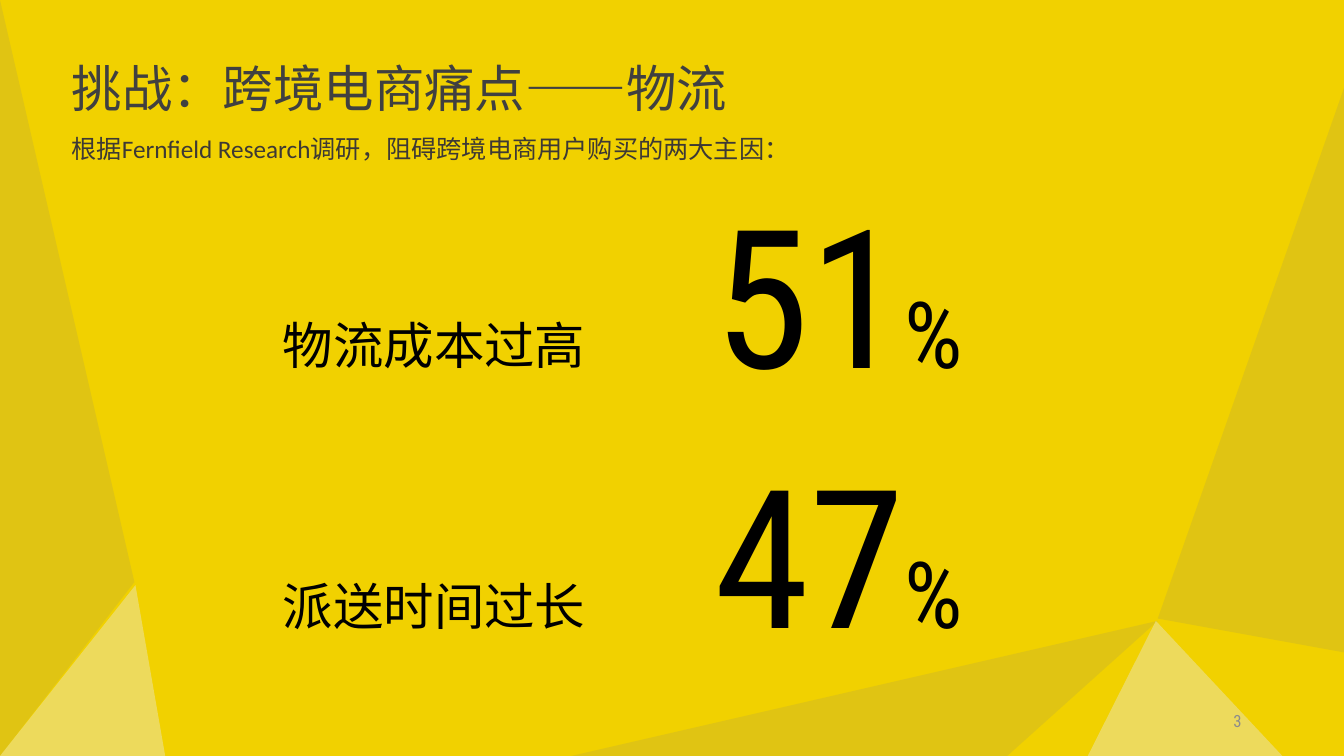
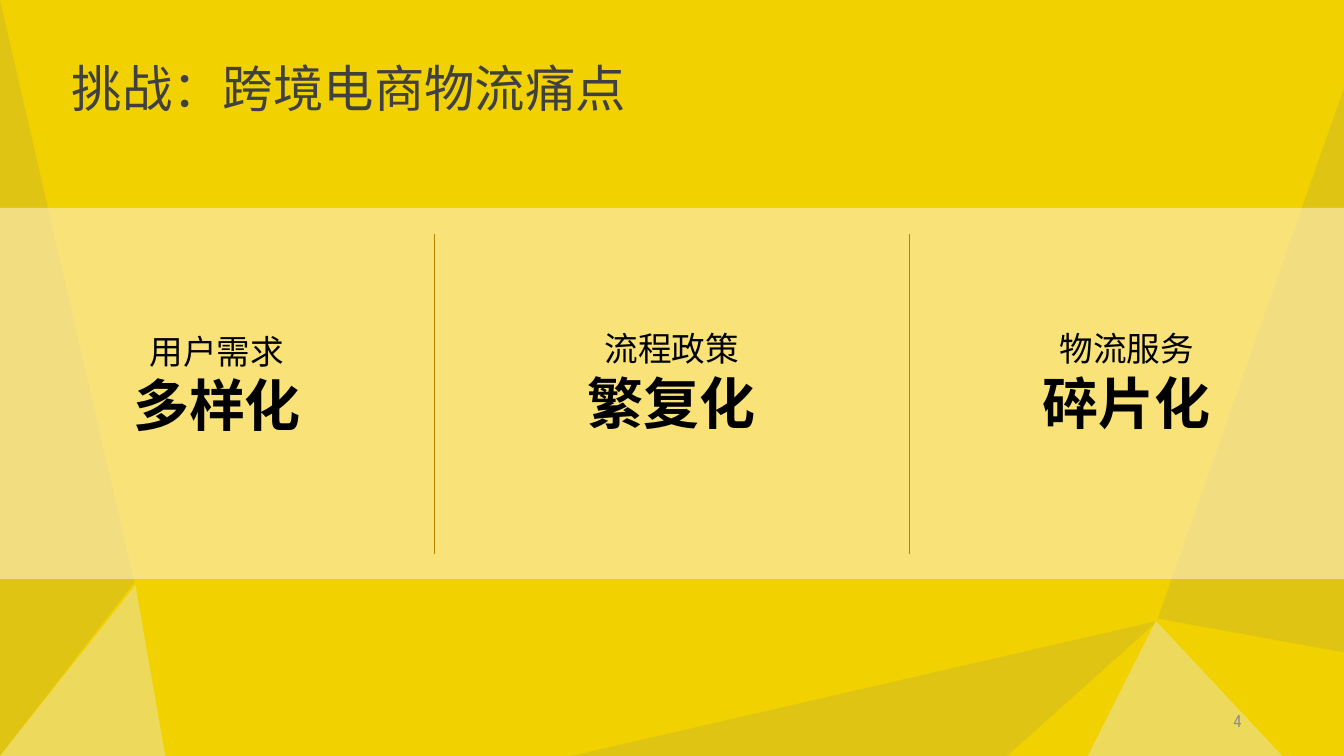
import lxml.etree
import pptx
import pptx.dml.color
import pptx.enum.shapes
import pptx.enum.text
import pptx.oxml.ns
import pptx.util

Pt = pptx.util.Pt
RGB = pptx.dml.color.RGBColor
Kind = pptx.enum.shapes.MSO_SHAPE
Side = pptx.enum.text.PP_ALIGN
Hold = pptx.enum.text.MSO_ANCHOR
qn = pptx.oxml.ns.qn

GOLD = RGB(0xF1, 0xD1, 0x00)
GRAY = RGB(0x80, 0x80, 0x80)
PALE = RGB(0xE9, 0xE9, 0xE8)
CREAM = RGB(0xFF, 0xF0, 0xCB)
BROWN = RGB(0xB8, 0x83, 0x01)
BLACK = RGB(0x00, 0x00, 0x00)
HEAD = RGB(0x40, 0x40, 0x40)
NOTE = RGB(0x3D, 0x39, 0x35)
FAINT = RGB(0x8C, 0x8C, 0x8C)

HAN = "Noto Sans CJK SC"
SLIM = "Roboto Condensed"
ROMAN = "Calibri"

WIDE, HIGH = 960, 540
EDGE = 44


def text(frame, words, size=36, face=HAN, tint=BLACK, bold=False, side=Side.LEFT, fresh=False):
    para = frame.add_paragraph() if fresh else frame.paragraphs[-1]
    para.alignment = side
    run = para.add_run()
    run.text = words
    font = run.font
    font.size, font.name, font.bold = Pt(size), face, bold
    font.color.rgb = tint
    east = lxml.etree.Element(qn("a:ea"), typeface=HAN)
    font._element.find(qn("a:latin")).addnext(east)


def box(slide, left, top, width, height, hold=Hold.TOP):
    frame = slide.shapes.add_textbox(Pt(left), Pt(top), Pt(width), Pt(height)).text_frame
    frame.word_wrap = True
    frame.vertical_anchor = hold
    return frame


def paint(shape, tint, alpha):
    shape.shadow.inherit = False
    shape.line.fill.background()
    shape.fill.solid()
    shape.fill.fore_color.rgb = tint
    color = shape.fill._xPr.find(qn("a:solidFill"))[0]
    lxml.etree.SubElement(color, qn("a:alpha"), val=str(alpha * 1000))


def wedge(slide, left, top, width, height, peak, tint, alpha, turn=0):
    shape = slide.shapes.add_shape(
        Kind.ISOSCELES_TRIANGLE, Pt(left), Pt(top), Pt(width), Pt(height))
    shape.adjustments[0] = peak
    shape.rotation = turn
    paint(shape, tint, alpha)


def shard(slide, points, tint, alpha):
    first, *rest = [(Pt(x), Pt(y)) for x, y in points]
    maker = slide.shapes.build_freeform(*first)
    maker.add_line_segments(rest, close=True)
    paint(maker.convert_to_shape(), tint, alpha)


def rule(slide, x, top, end):
    line = slide.shapes.add_connector(
        pptx.enum.shapes.MSO_CONNECTOR.STRAIGHT, Pt(x), Pt(top), Pt(x), Pt(end))
    line.line.color.rgb = BROWN
    line.line.width = Pt(0.5)
    lxml.etree.SubElement(line._element.spPr, qn("a:effectLst"))


def scene(slide):
    slide.background.fill.solid()
    slide.background.fill.fore_color.rgb = GOLD
    wedge(slide, -222, 222, HIGH, 96, 0.77, GRAY, 15, turn=90)
    wedge(slide, 0, 418, 118, 122, 0.82, PALE, 40)
    shard(slide, [(827, 443.5), (719.5, HIGH), (408, HIGH)], GRAY, 15)
    wedge(slide, 777, 443.5, 139, 96.5, 0.35, PALE, 40)
    wedge(slide, 692, 198, 403, 133, 0.06, GRAY, 15, turn=270)


def start(deck, title, number):
    slide = deck.slides.add_slide(deck.slide_layouts[5])
    scene(slide)
    head = slide.shapes.title
    head.left, head.top, head.width, head.height = Pt(EDGE), Pt(37.5), Pt(850), Pt(51)
    head.text_frame.vertical_anchor = Hold.TOP
    text(head.text_frame, title, tint=HEAD)
    frame = box(slide, 678, 500, 216, 29, Hold.MIDDLE)
    text(frame, number, size=12, face=SLIM, tint=FAINT, side=Side.RIGHT)
    return slide


def score(slide, top, label, value):
    text(box(slide, 195, top + 126, 429, 51), label)
    frame = box(slide, 503, top, 372, 226, Hold.MIDDLE)
    text(frame, value, size=138, face=SLIM)
    text(frame, "%", size=66, face=SLIM)


def pair(slide, left, top, width, label, claim):
    frame = box(slide, left, top, width, 85)
    text(frame, label, size=24, side=Side.CENTER)
    text(frame, claim, size=40, bold=True, side=Side.CENTER, fresh=True)


def causes(deck):
    slide = start(deck, "挑战：跨境电商痛点——物流", "3")
    frame = box(slide, EDGE, 91.5, 859, 29, Hold.MIDDLE)
    text(frame, "根据Fernfield Research调研，阻碍跨境电商用户购买的两大主因：",
         size=18, face=ROMAN, tint=NOTE)
    score(slide, 95, "物流成本过高", "51")
    score(slide, 281, "派送时间过长", "47")


def pains(deck):
    slide = start(deck, "挑战：跨境电商物流痛点", "4")
    band = slide.shapes.add_shape(Kind.RECTANGLE, 0, Pt(148.5), Pt(WIDE), Pt(265))
    paint(band, CREAM, 60)
    stops = [0, 310, 649.5, WIDE]
    items = [("用户需求", "多样化", 232.5), ("流程政策", "繁复化", 231),
             ("物流服务", "碎片化", 231)]
    for left, right, (label, claim, top) in zip(stops, stops[1:], items):
        pair(slide, left, top, right - left, label, claim)
    for x in stops[1:-1]:
        rule(slide, x, 167, 395.5)


def main():
    deck = pptx.Presentation()
    deck.slide_width, deck.slide_height = Pt(WIDE), Pt(HIGH)
    causes(deck)
    pains(deck)
    deck.save("out.pptx")


if __name__ == "__main__":
    main()
